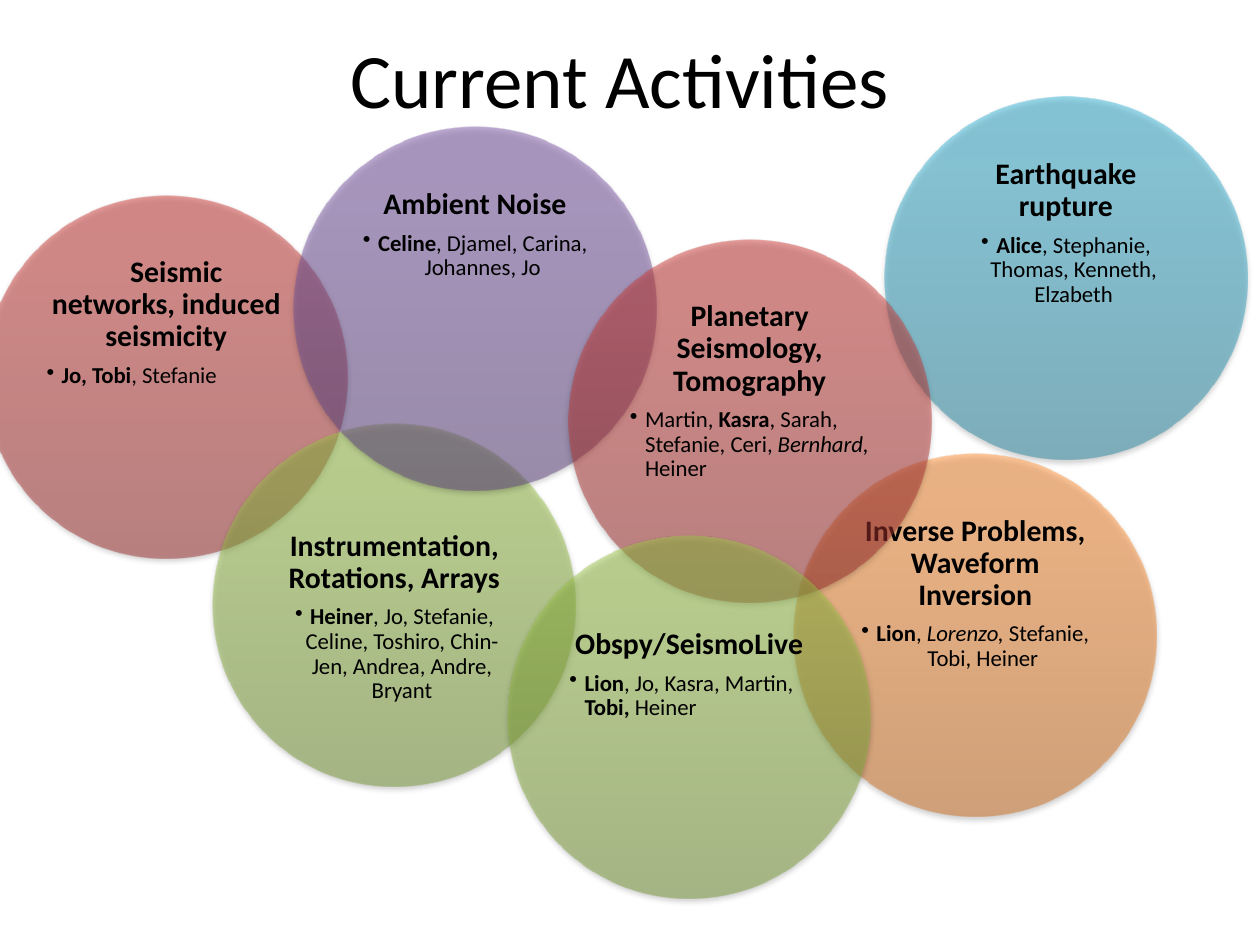
from lxml.etree import SubElement
from pptx import Presentation
from pptx.dml.color import RGBColor
from pptx.enum.shapes import MSO_SHAPE
from pptx.enum.text import MSO_ANCHOR, PP_ALIGN
from pptx.oxml import parse_xml
from pptx.oxml.ns import nsdecls, qn
from pptx.util import Inches, Pt

BLACK = RGBColor(0x00, 0x00, 0x00)

# Gradient colours from the bottom of a circle to its top
RED = [RGBColor(0x9C, 0x2F, 0x2D), RGBColor(0xCB, 0x3E, 0x3A), RGBColor(0xCE, 0x3B, 0x37)]
GREEN = [RGBColor(0x77, 0x97, 0x37), RGBColor(0x9B, 0xC3, 0x48), RGBColor(0x9D, 0xC7, 0x46)]
PURPLE = [RGBColor(0x5F, 0x44, 0x80), RGBColor(0x7B, 0x58, 0xA6), RGBColor(0x7C, 0x57, 0xA8)]
BLUE = [RGBColor(0x2A, 0x88, 0xA2), RGBColor(0x37, 0xB1, 0xD2), RGBColor(0x34, 0xB4, 0xD6)]
ORANGE = [RGBColor(0xCC, 0x6E, 0x20), RGBColor(0xFF, 0x90, 0x34), RGBColor(0xFF, 0x91, 0x36)]
STOPS = (0, 80, 100)

DIAMETER = 2.88
TEXT_SIDE = 2.04  # square inscribed in the circle
TEXT_OFFSET = (DIAMETER - TEXT_SIDE) / 2
INSET = 0.07
CENTER, LEFT = PP_ALIGN.CENTER, PP_ALIGN.LEFT

# left, top, colours, heading, people as (text, style), alignment of people,
# extra space above the heading, first-line shift of the heading
ACTIVITIES = [
    (-0.12, 1.55, RED, "Seismic networks, induced seismicity",
     [("Jo, Tobi", "b"), (", Stefanie", "")], LEFT, 0, 0.16),
    (1.69, 3.36, GREEN, "Instrumentation, Rotations, Arrays",
     [("Heiner", "b"), (", Jo, Stefanie, Celine, Toshiro, Chin-Jen, Andrea, Andre, Bryant", "")],
     CENTER, 0.36, 0),
    (2.33, 1.01, PURPLE, "Ambient Noise",
     [("Celine", "b"), (", Djamel, Carina, Johannes, Jo", "")], CENTER, 0, 0),
    (7.02, 0.77, BLUE, "Earthquake rupture",
     [("Alice", "b"), (", Stephanie, Thomas, Kenneth, Elzabeth", "")], CENTER, 0, 0),
    (6.3, 3.6, ORANGE, "Inverse Problems, Waveform Inversion",
     [("Lion", "b"), (", ", ""), ("Lorenzo, ", "i"), ("Stefanie, Tobi, Heiner", "")],
     CENTER, 0, 0),
    (4.51, 1.9, RED, "Planetary Seismology, Tomography",
     [("Martin, ", ""), ("Kasra", "b"), (", Sarah, Stefanie, Ceri, ", ""),
      ("Bernhard, ", "i"), ("Heiner", "")], LEFT, 0, 0),
    (4.03, 4.25, GREEN, "Obspy/SeismoLive",
     [("Lion", "b"), (", Jo, Kasra, Martin, ", ""), ("Tobi, ", "b"), ("Heiner", "")],
     LEFT, 0.25, 0),
]


class ActivitySlide:
    font = "Calibri"

    def __init__(self, presentation):
        self.slide = presentation.slides.add_slide(presentation.slide_layouts[5])

    def style(self, run, size, marks=""):
        run.font.name = self.font
        run.font.size = Pt(size)
        run.font.color.rgb = BLACK
        run.font.bold = "b" in marks
        run.font.italic = "i" in marks

    def title(self, text):
        title = self.slide.shapes.title
        title.left, title.top = Inches(0.67), Inches(-0.19)
        title.width, title.height = Inches(8.5), Inches(1.61)
        frame = title.text_frame
        frame.text = text
        frame.vertical_anchor = MSO_ANCHOR.MIDDLE
        frame.paragraphs[0].alignment = CENTER
        self.style(frame.paragraphs[0].runs[0], 44)

    def circle(self, left, top, colors):
        circle = self.slide.shapes.add_shape(
            MSO_SHAPE.OVAL, Inches(left), Inches(top), Inches(DIAMETER), Inches(DIAMETER))
        circle.shadow.inherit = False
        circle.line.fill.background()
        # Half-transparent gradient with three stops
        stops = "".join(
            f'<a:gs pos="{stop * 1000}"><a:srgbClr val="{color}">'
            '<a:alpha val="50000"/></a:srgbClr></a:gs>'
            for stop, color in zip(STOPS, colors))
        properties = circle._element.spPr
        properties.find(qn("a:prstGeom")).addnext(parse_xml(
            f'<a:gradFill {nsdecls("a")} rotWithShape="1"><a:gsLst>{stops}</a:gsLst>'
            '<a:lin ang="16200000" scaled="0"/></a:gradFill>'))
        # Soft shadow below
        shadow = SubElement(
            properties.find(qn("a:effectLst")), qn("a:outerShdw"),
            blurRad=str(Pt(3.1)), dist=str(Pt(1.8)), dir="5400000", rotWithShape="0")
        shade = SubElement(shadow, qn("a:srgbClr"), val=str(BLACK))
        SubElement(shade, qn("a:alpha"), val="35000")

    def label(self, left, top, heading, people, alignment, space_above, shift):
        label = self.slide.shapes.add_textbox(
            Inches(left), Inches(top), Inches(TEXT_SIDE), Inches(TEXT_SIDE))
        frame = label.text_frame
        frame.word_wrap = True
        frame.margin_left = frame.margin_right = frame.margin_bottom = Inches(INSET)
        frame.margin_top = Inches(INSET + space_above)

        # Heading
        frame.text = heading
        topic = frame.paragraphs[0]
        topic.alignment = CENTER
        topic.line_spacing = 0.9
        topic.space_after = Pt(6)
        if shift:
            topic._p.get_or_add_pPr().set("indent", str(Inches(shift)))
        self.style(topic.runs[0], 17, "b")

        # Bulleted people
        members = frame.add_paragraph()
        members.level = 1
        members.alignment = alignment
        members.line_spacing = 0.9
        members.space_after = Pt(2)
        properties = members._p.get_or_add_pPr()
        properties.set("marL", str(Inches(0.12)))
        properties.set("indent", str(Inches(-0.12)))
        SubElement(properties, qn("a:buChar"), char="•")
        for text, marks in people:
            run = members.add_run()
            run.text = text
            self.style(run, 13, marks)


def main():
    presentation = Presentation()
    presentation.slide_width, presentation.slide_height = Inches(10), Inches(7.5)
    page = ActivitySlide(presentation)
    page.title("Current Activities")
    for left, top, colors, *content in ACTIVITIES:
        page.circle(left, top, colors)
        page.label(left + TEXT_OFFSET, top + TEXT_OFFSET, *content)
    presentation.save("out.pptx")


if __name__ == "__main__":
    main()
